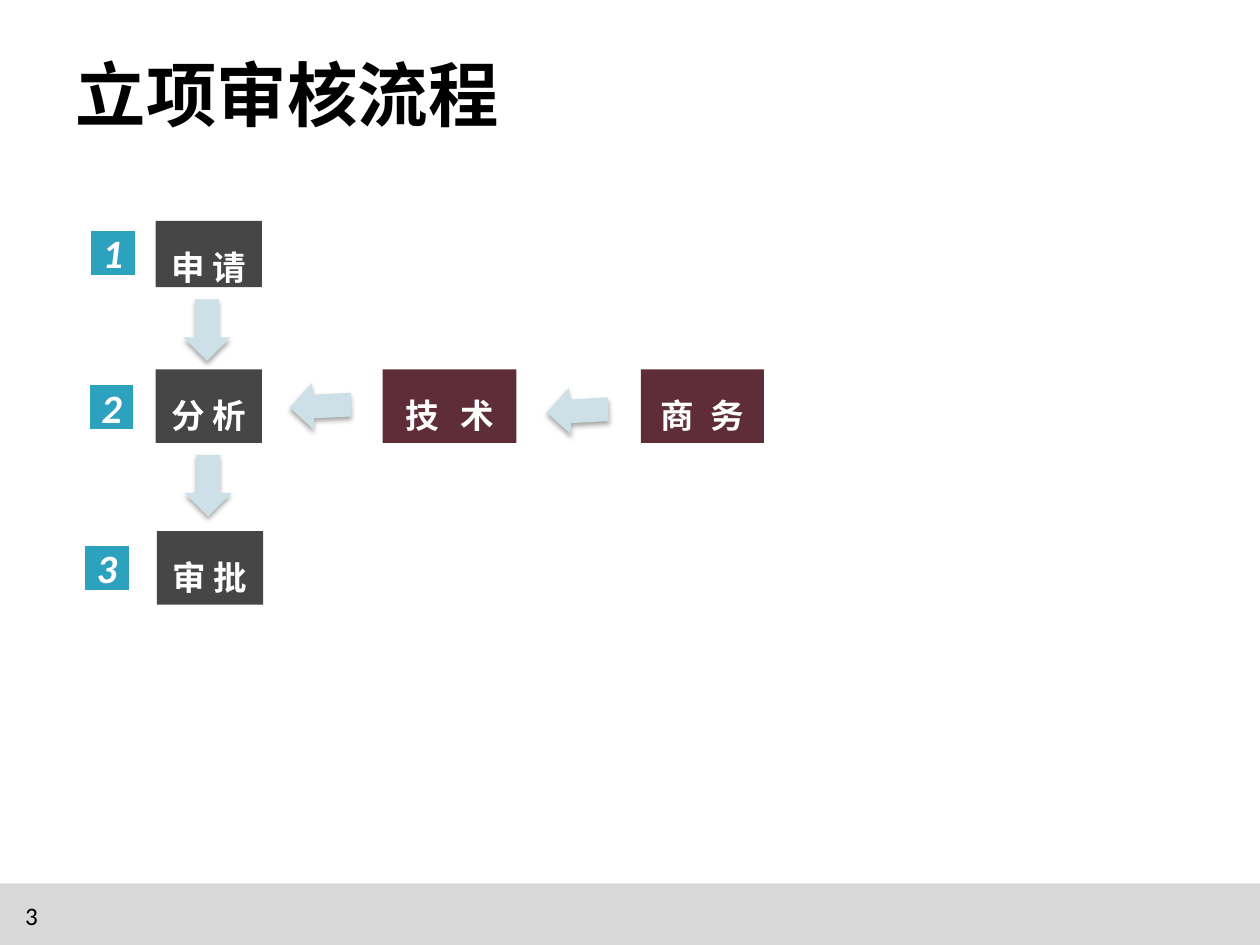
from dataclasses import dataclass

import lxml.etree
import pptx
import pptx.dml.color
import pptx.enum.shapes
import pptx.enum.text
import pptx.oxml
import pptx.oxml.ns
import pptx.util

Inches = pptx.util.Inches
Align = pptx.enum.text.PP_ALIGN
Anchor = pptx.enum.text.MSO_ANCHOR
Kind = pptx.enum.shapes.MSO_SHAPE
qn = pptx.oxml.ns.qn


@dataclass(frozen=True)
class Theme:
    black: str = "000000"
    white: str = "FFFFFF"
    bar: str = "D9D9D9"
    badge: str = "2DA2BF"
    step: str = "464646"
    review: str = "5E2D37"
    arrow: str = "CDE0E8"
    latin: str = "Calibri"
    han: str = "Noto Sans CJK SC"
    title: int = 42
    digit: int = 24
    label: int = 20
    page: int = 15


@dataclass(frozen=True)
class Badge:
    left: float
    top: float
    text: str


@dataclass(frozen=True)
class Step:
    left: float
    top: float
    width: float
    text: str
    fill: str
    height: float = 0.61
    columns: int = 2


@dataclass(frozen=True)
class Arrow:
    left: float
    top: float
    turn: float = 0


THEME = Theme()
BADGES = [Badge(0.74, 1.9, "1"), Badge(0.73, 3.18, "2"), Badge(0.69, 4.51, "3")]
STEPS = [
    Step(1.29, 1.83, 0.88, "申 请", THEME.step, 0.55, 1),
    Step(1.29, 3.06, 0.88, "分析", THEME.step),
    Step(1.3, 4.4, 0.88, "审批", THEME.step),
    Step(3.17, 3.06, 1.11, "技术", THEME.review),
    Step(5.31, 3.06, 1.02, "商务", THEME.review),
]
ARROWS = [
    Arrow(1.52, 2.48),
    Arrow(1.53, 3.77),
    Arrow(2.46, 3.11, 87.3),
    Arrow(4.59, 3.15, 86.8),
]


def paint(code: str) -> pptx.dml.color.RGBColor:
    return pptx.dml.color.RGBColor.from_string(code)


def write(shape, text: str, size: int, face: str, ink: str,
          bold: bool = False, align=Align.LEFT):
    """Put one line of styled text in a shape and return its paragraph."""
    shape.text_frame.word_wrap = True
    line = shape.text_frame.paragraphs[0]
    line.text = text
    line.alignment = align
    font = line.font
    font.size = pptx.util.Pt(size)
    font.name = face
    font.bold = bold
    font.color.rgb = paint(ink)
    lxml.etree.SubElement(font._element, qn("a:ea")).set("typeface", face)
    return line


def block(slide, kind, left: float, top: float, width: float, height: float, fill: str):
    shape = slide.shapes.add_shape(
        kind, Inches(left), Inches(top), Inches(width), Inches(height))
    shape.shadow.inherit = False
    shape.fill.solid()
    shape.fill.fore_color.rgb = paint(fill)
    shape.line.fill.background()
    return shape


def label(slide, left: float, top: float, width: float, height: float):
    return slide.shapes.add_textbox(
        Inches(left), Inches(top), Inches(width), Inches(height))


def draw_badge(slide, badge: Badge) -> None:
    shape = block(slide, Kind.RECTANGLE, badge.left, badge.top, 0.39, 0.39, THEME.badge)
    shape.line.color.rgb = paint(THEME.white)
    shape.line.width = pptx.util.Pt(2)
    line = write(shape, badge.text, THEME.digit, THEME.latin, THEME.white, True, Align.CENTER)
    line.font.italic = True


def draw_step(slide, step: Step) -> None:
    shape = block(slide, Kind.RECTANGLE, step.left, step.top, step.width, step.height, step.fill)
    line = write(shape, step.text, THEME.label, THEME.han, THEME.white, True, Align.CENTER)
    line.line_spacing = 1.5
    shape.text_frame.vertical_anchor = Anchor.TOP
    # Each character of a two-column label sits in its own column
    shape.text_frame._txBody.bodyPr.set("numCol", str(step.columns))


def draw_arrow(slide, arrow: Arrow) -> None:
    shape = block(slide, Kind.DOWN_ARROW, arrow.left, arrow.top, 0.39, 0.51, THEME.arrow)
    shape.rotation = arrow.turn
    # Soft shadow straight below
    glow = shape._element.spPr.find(qn("a:effectLst"))
    shade = lxml.etree.SubElement(
        glow, qn("a:outerShdw"), blurRad=str(pptx.util.Pt(3.1)),
        dist=str(pptx.util.Pt(1.8)), dir="5400000", rotWithShape="0")
    tint = lxml.etree.SubElement(shade, qn("a:srgbClr"), val=THEME.black)
    lxml.etree.SubElement(tint, qn("a:alpha"), val="35000")


def main() -> None:
    deck = pptx.Presentation()
    deck.slide_width, deck.slide_height = Inches(10.44), Inches(7.83)
    slide = deck.slides.add_slide(deck.slide_layouts[6])

    # Footer bar and page number
    block(slide, Kind.RECTANGLE, 0, 7.32, 10.44, 0.51, THEME.bar)
    page = label(slide, 0.11, 7.41, 1.15, 0.33)
    write(page, "3", THEME.page, THEME.latin, THEME.black)

    # Title
    title = label(slide, 0.55, 0.38, 7.43, 0.79)
    write(title, "立项审核流程", THEME.title, THEME.han, THEME.black, True)
    title.text_frame.vertical_anchor = Anchor.MIDDLE
    title.text_frame.margin_left = title.text_frame.margin_right = Inches(0.08)

    # Review flow
    for badge in BADGES:
        draw_badge(slide, badge)
    for step in STEPS:
        draw_step(slide, step)
    for arrow in ARROWS:
        draw_arrow(slide, arrow)

    deck.save("out.pptx")


if __name__ == "__main__":
    main()
